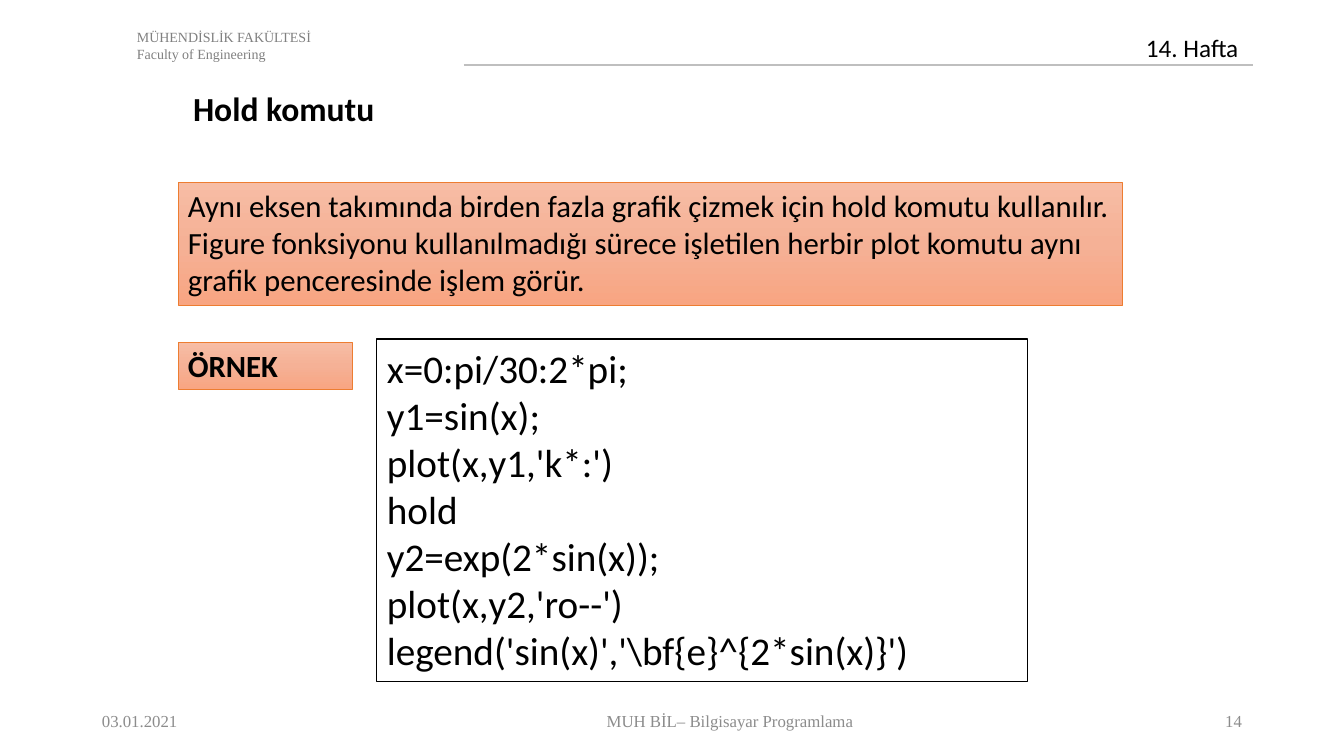
from copy import deepcopy

from pptx import Presentation
from pptx import util as u
from pptx.dml.color import RGBColor
from pptx.enum import shapes, text
from pptx.oxml.ns import qn

LEFT, CENTER, RIGHT = text.PP_ALIGN.LEFT, text.PP_ALIGN.CENTER, text.PP_ALIGN.RIGHT
TOP, MIDDLE = text.MSO_ANCHOR.TOP, text.MSO_ANCHOR.MIDDLE


def px(count):
    """Turn slide pixels (100.8 to the inch) into EMU."""
    return u.Emu(round(count * 914400 / 100.8))


def color(value):
    return RGBColor.from_string(value)


class LectureSlide:
    BODY_FONT, FRAME_FONT = "Calibri", "Times New Roman"
    BLACK, HEADER_GRAY, FOOTER_GRAY, RULE_GRAY = "000000", "808080", "8C8C8C", "BFBFBF"
    ORANGE = "ED7D31"
    ORANGE_STOPS = [(0, "F7BDA5"), (0.5, "F5B196"), (1, "F8A582")]

    def __init__(self, presentation):
        self.slide = presentation.slides.add_slide(presentation.slide_layouts[5])

    def set_text(self, shape, lines, size, font=BODY_FONT, ink=BLACK, bold=False,
                 align=LEFT, anchor=TOP):
        frame = shape.text_frame
        frame.text = "\n".join(lines)
        frame.word_wrap = True
        frame.auto_size = text.MSO_AUTO_SIZE.NONE
        frame.vertical_anchor = anchor
        for paragraph in frame.paragraphs:
            paragraph.alignment = align
            paragraph.font.name = font
            paragraph.font.size = u.Pt(size)
            paragraph.font.bold = bold
            paragraph.font.color.rgb = color(ink)

    def title(self, box, line):
        title = self.slide.shapes.title
        title.left, title.top, title.width, title.height = map(px, box)
        self.set_text(title, [line], 24, bold=True, anchor=MIDDLE)
        title.text_frame.margin_bottom = 0

    def label(self, box, lines, size, **style):
        self.set_text(self.slide.shapes.add_textbox(*map(px, box)), lines, size, **style)

    def footer(self, box, line, align):
        self.label(box, [line], 12, font=self.FRAME_FONT, ink=self.FOOTER_GRAY,
                   align=align, anchor=MIDDLE)

    def panel(self, box, lines, size, line_color, line_width, stops=None, bold=False):
        """Add an outlined rectangle, with a downward gradient if stops are given."""
        panel = self.slide.shapes.add_shape(shapes.MSO_SHAPE.RECTANGLE, *map(px, box))
        panel.shadow.inherit = False
        panel.line.color.rgb = color(line_color)
        panel.line.width = u.Pt(line_width)
        if stops:
            self.fill_gradient(panel, stops)
        else:
            panel.fill.background()
        self.set_text(panel, lines, size, bold=bold)

    def fill_gradient(self, shape, stops):
        shape.fill.gradient()
        shape.fill.gradient_angle = 270
        stop_list = shape._element.spPr.find(".//" + qn("a:gsLst"))
        while len(stop_list) < len(stops):
            stop_list.append(deepcopy(stop_list[0]))
        for stop, (position, value) in zip(shape.fill.gradient_stops, stops):
            stop.position = position
            stop.color.rgb = color(value)

    def rule(self, left, right, top):
        rule = self.slide.shapes.add_connector(
            shapes.MSO_CONNECTOR.STRAIGHT, px(left), px(top), px(right), px(top))
        rule.line.color.rgb = color(self.RULE_GRAY)
        rule.line.width = u.Pt(1.5)
        properties = rule._element.spPr
        properties.append(properties.makeelement(qn("a:effectLst"), {}))


def main():
    presentation = Presentation()
    presentation.slide_width, presentation.slide_height = px(1344), px(756)
    page = LectureSlide(presentation)

    page.rule(464, 1253, 65)
    page.label((127, 24, 672, 44), ["MÜHENDİSLİK FAKÜLTESİ", "Faculty of Engineering"], 10,
               font=page.FRAME_FONT, ink=page.HEADER_GRAY)
    page.label((1136, 27, 116, 40), ["14. Hafta"], 18)
    page.title((183, 83, 457, 45), "Hold komutu")

    page.panel((178, 182, 944, 123), [
        "Aynı eksen takımında birden fazla grafik çizmek için hold komutu kullanılır. "
        "Figure fonksiyonu kullanılmadığı sürece işletilen herbir plot komutu aynı "
        "grafik penceresinde işlem görür."], 22, page.ORANGE, 0.5, page.ORANGE_STOPS)
    page.panel((377, 339, 651, 343), [
        "x=0:pi/30:2*pi;",
        "y1=sin(x);",
        "plot(x,y1,'k*:')",
        "hold",
        "y2=exp(2*sin(x));",
        "plot(x,y2,'ro--')",
        r"legend('sin(x)','\bf{e}^{2*sin(x)}')"], 28, page.BLACK, 0.75)
    page.panel((178, 342, 174, 47), ["ÖRNEK"], 22, page.ORANGE, 0.5,
               page.ORANGE_STOPS, bold=True)

    page.footer((92, 701, 158, 40), "03.01.2021", LEFT)
    page.footer((275, 701, 910, 40), "MUH BİL– Bilgisayar Programlama", CENTER)
    page.footer((1207, 701, 45, 40), "14", RIGHT)

    presentation.save("out.pptx")


if __name__ == "__main__":
    main()
